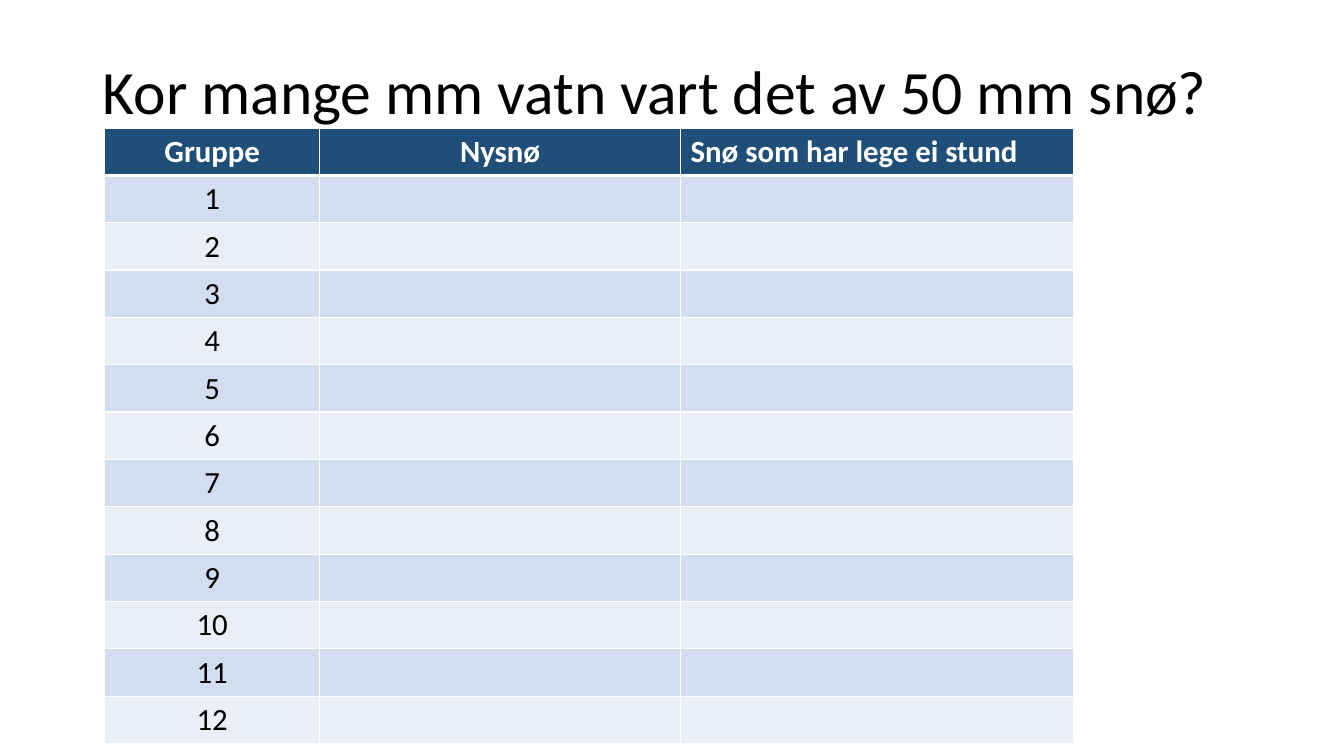
from lxml import etree
from pptx import Presentation
from pptx.dml.color import RGBColor
from pptx.enum import text
from pptx.oxml import ns
from pptx.util import Inches, Pt

COLORS = {
    "text": "000000",
    "header": "1F4E79",
    "header_text": "FFFFFF",
    "odd_row": "D2DEEF",
    "even_row": "EAEFF7",
    "border": "FFFFFF",
}
FONT = "Calibri"
HEADINGS = ["Gruppe", "Nysnø", "Snø som har lege ei stund"]
COLUMN_WIDTHS = [2.13, 3.58, 3.9]
GROUP_COUNT = 12
ROW_HEIGHT = 0.47


def color(name):
    return RGBColor.from_string(COLORS[name])


def style_font(paragraph, size, color_name, bold=False):
    font = paragraph.font
    font.name = FONT
    font.size = Pt(size)
    font.bold = bold
    font.color.rgb = color(color_name)


def add_title(slide, wording):
    box = slide.shapes.add_textbox(Inches(0.92), Inches(0.4), Inches(11.5), Inches(1.08))
    frame = box.text_frame
    frame.word_wrap = True
    frame.vertical_anchor = text.MSO_ANCHOR.MIDDLE
    paragraph = frame.paragraphs[0]
    paragraph.text = wording
    paragraph.line_spacing = 0.9
    style_font(paragraph, 44, "text")


def add_border(cell, side, width):
    properties = cell._tc.get_or_add_tcPr()
    line = etree.SubElement(properties, ns.qn(f"a:ln{side}"), w=str(Pt(width)))
    fill = etree.SubElement(line, ns.qn("a:solidFill"))
    etree.SubElement(fill, ns.qn("a:srgbClr"), val=COLORS["border"])


def fill_cell(cell, wording, row, column):
    is_header = row == 0
    widths = {"L": 1, "R": 1, "T": 3 if row == 1 else 1, "B": 3 if is_header else 1}
    for side, width in widths.items():
        add_border(cell, side, width)
    cell.fill.solid()
    band = "header" if is_header else "odd_row" if row % 2 else "even_row"
    cell.fill.fore_color.rgb = color(band)
    paragraph = cell.text_frame.paragraphs[0]
    if wording:
        paragraph.text = wording
    if column < 2:
        paragraph.alignment = text.PP_ALIGN.CENTER
    style_font(paragraph, 22, "header_text" if is_header else "text", is_header)


def add_group_table(slide):
    rows = [HEADINGS] + [[str(group), "", ""] for group in range(1, GROUP_COUNT + 1)]
    frame = slide.shapes.add_table(
        len(rows), len(HEADINGS), Inches(1.04), Inches(1.27),
        Inches(sum(COLUMN_WIDTHS)), Inches(ROW_HEIGHT * len(rows)),
    )
    table = frame.table
    for column, width in zip(table.columns, COLUMN_WIDTHS):
        column.width = Inches(width)
    for row, wordings in enumerate(rows):
        table.rows[row].height = Inches(ROW_HEIGHT)
        for column, wording in enumerate(wordings):
            fill_cell(table.cell(row, column), wording, row, column)


def main():
    presentation = Presentation()
    presentation.slide_width = Inches(13.33)
    presentation.slide_height = Inches(7.5)
    slide = presentation.slides.add_slide(presentation.slide_layouts[6])
    add_title(slide, "Kor mange mm vatn vart det av 50 mm snø?")
    add_group_table(slide)
    presentation.save("out.pptx")


if __name__ == "__main__":
    main()
